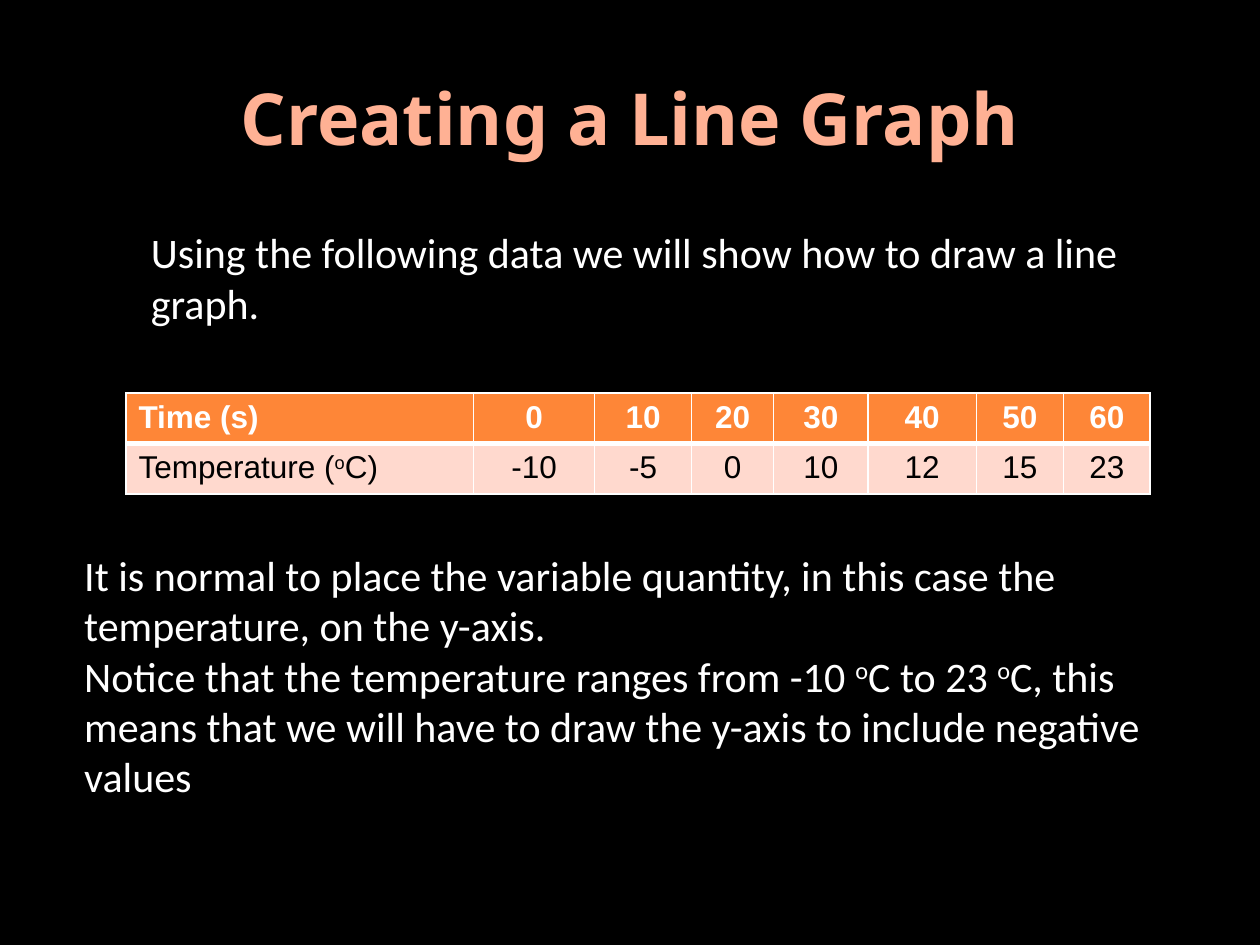
from dataclasses import dataclass

from pptx import Presentation
from pptx import util as u
from pptx.dml.color import RGBColor
from pptx.enum import text
from pptx.oxml import ns
from lxml import etree


@dataclass(frozen=True)
class Theme:
    background: str = "000000"
    title: str = "FFB194"
    light: str = "FFFFFF"
    dark: str = "000000"
    header: str = "FE8637"
    band: str = "FFD9CE"
    title_font: str = "Noto Sans"
    body_font: str = "Calibri"
    table_font: str = "Arial"
    title_size: float = 41
    body_size: float = 24
    table_size: float = 18


THEME = Theme()
COLUMN_WIDTHS = [2.76, 0.96, 0.77, 0.65, 0.75, 0.86, 0.69, 0.69]
ROW_HEIGHT = 0.38
READINGS = [
    ["Time (s)", "0", "10", "20", "30", "40", "50", "60"],
    ["Temperature (^o^C)", "-10", "-5", "0", "10", "12", "15", "23"],
]
INTRODUCTION = ["Using the following data we will show how to draw a line graph."]
EXPLANATION = [
    "It is normal to place the variable quantity, in this case the temperature, on the y-axis.",
    "Notice that the temperature ranges from -10 ^o^C to 23 ^o^C, this means that "
    "we will have to draw the y-axis to include negative values",
]


def write_paragraph(paragraph, content, font, size, color, bold=False):
    for index, part in enumerate(content.split("^")):
        run = paragraph.add_run()
        run.text = part
        run.font.name = font
        run.font.size = u.Pt(size)
        run.font.bold = bold
        run.font.color.rgb = RGBColor.from_string(color)
        if index % 2:
            run.font._element.set("baseline", "30000")


def add_title(slide, content):
    title = slide.shapes.title
    title.left, title.top = u.Inches(0.5), u.Inches(0.3)
    title.width, title.height = u.Inches(9), u.Inches(1.25)
    frame = title.text_frame
    frame.auto_size = text.MSO_AUTO_SIZE.NONE
    frame.vertical_anchor = text.MSO_ANCHOR.MIDDLE
    paragraph = frame.paragraphs[0]
    paragraph.alignment = text.PP_ALIGN.CENTER
    write_paragraph(paragraph, content, THEME.title_font, THEME.title_size, THEME.title, True)


def add_text(slide, left, top, width, height, contents, indent=0, space_before=0):
    box = slide.shapes.add_textbox(*map(u.Inches, (left, top, width, height)))
    frame = box.text_frame
    frame.word_wrap = True
    for index, content in enumerate(contents):
        paragraph = frame.add_paragraph() if index else frame.paragraphs[0]
        paragraph.space_before = u.Pt(space_before)
        paragraph._p.get_or_add_pPr().set("marL", str(u.Inches(indent)))
        write_paragraph(paragraph, content, THEME.body_font, THEME.body_size, THEME.light)


def set_borders(cell, widths):
    properties = cell._tc.get_or_add_tcPr()
    for position, (side, width) in enumerate(widths.items()):
        line = etree.Element(ns.qn(f"a:{side}"), w=str(u.Pt(width)))
        fill = etree.SubElement(line, ns.qn("a:solidFill"))
        etree.SubElement(fill, ns.qn("a:srgbClr"), val=THEME.light)
        properties.insert(position, line)


def add_readings_table(slide, left, top):
    frame = slide.shapes.add_table(
        len(READINGS), len(COLUMN_WIDTHS), u.Inches(left), u.Inches(top),
        u.Inches(sum(COLUMN_WIDTHS)), u.Inches(ROW_HEIGHT * len(READINGS)),
    )
    table = frame.table
    for column, width in zip(table.columns, COLUMN_WIDTHS):
        column.width = u.Inches(width)
    for row_index, values in enumerate(READINGS):
        is_header = row_index == 0
        for column_index, value in enumerate(values):
            cell = table.cell(row_index, column_index)
            cell.fill.solid()
            cell.fill.fore_color.rgb = RGBColor.from_string(
                THEME.header if is_header else THEME.band)
            paragraph = cell.text_frame.paragraphs[0]
            if column_index:
                paragraph.alignment = text.PP_ALIGN.CENTER
            write_paragraph(paragraph, value, THEME.table_font, THEME.table_size,
                            THEME.light if is_header else THEME.dark, is_header)
            set_borders(cell, {"lnL": 1, "lnR": 1, "lnT": 1 if is_header else 3,
                               "lnB": 3 if is_header else 1})


def main():
    presentation = Presentation()
    presentation.slide_width, presentation.slide_height = u.Inches(10), u.Inches(7.5)
    slide = presentation.slides.add_slide(presentation.slide_layouts[5])
    slide.background.fill.solid()
    slide.background.fill.fore_color.rgb = RGBColor.from_string(THEME.background)
    add_title(slide, "Creating a Line Graph")
    add_text(slide, 0.5, 1.75, 9, 5.15, INTRODUCTION, indent=0.6, space_before=4.8)
    add_readings_table(slide, 1, 3.12)
    add_text(slide, 0.57, 4.31, 9.12, 2.12, EXPLANATION)
    presentation.save("out.pptx")


if __name__ == "__main__":
    main()
